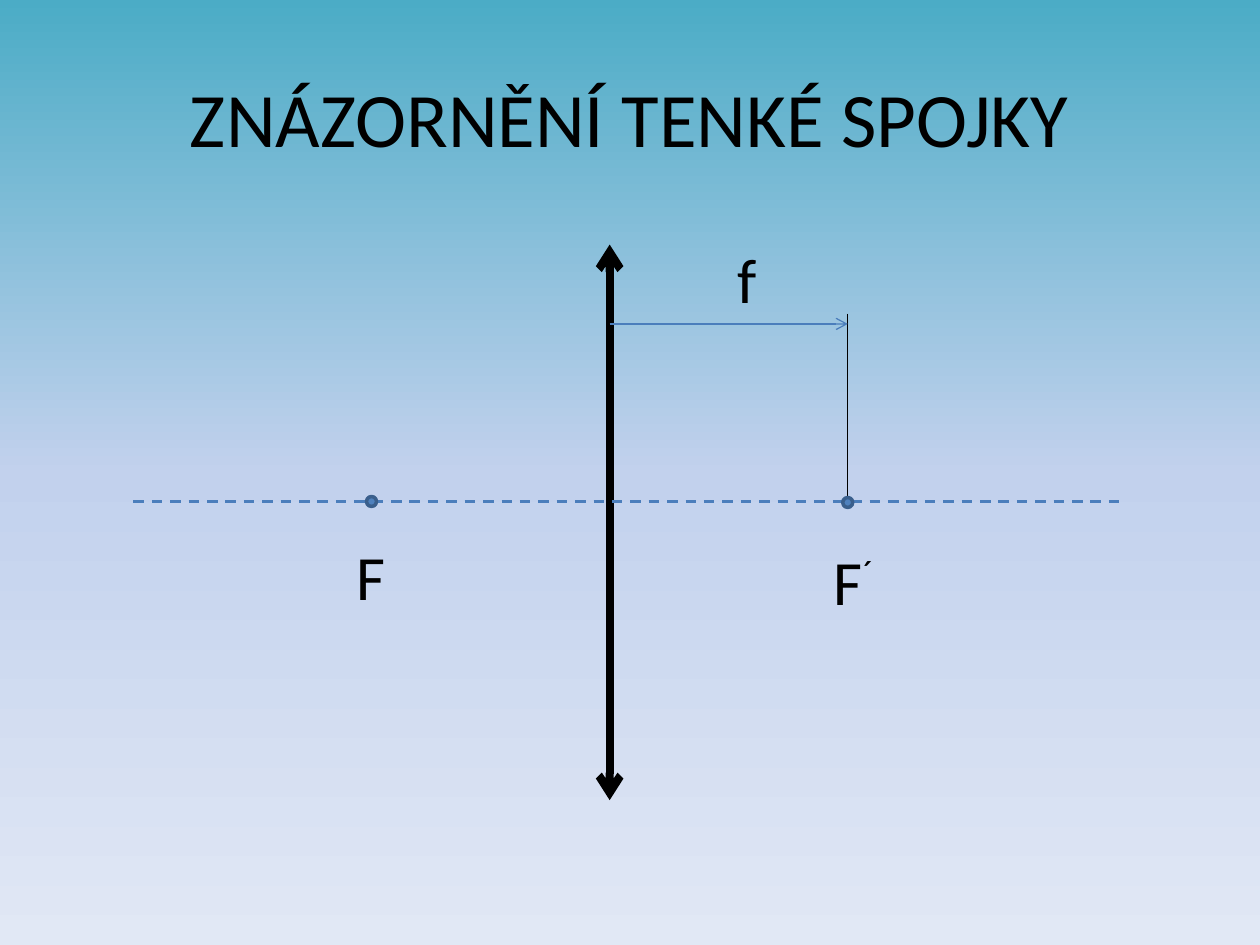
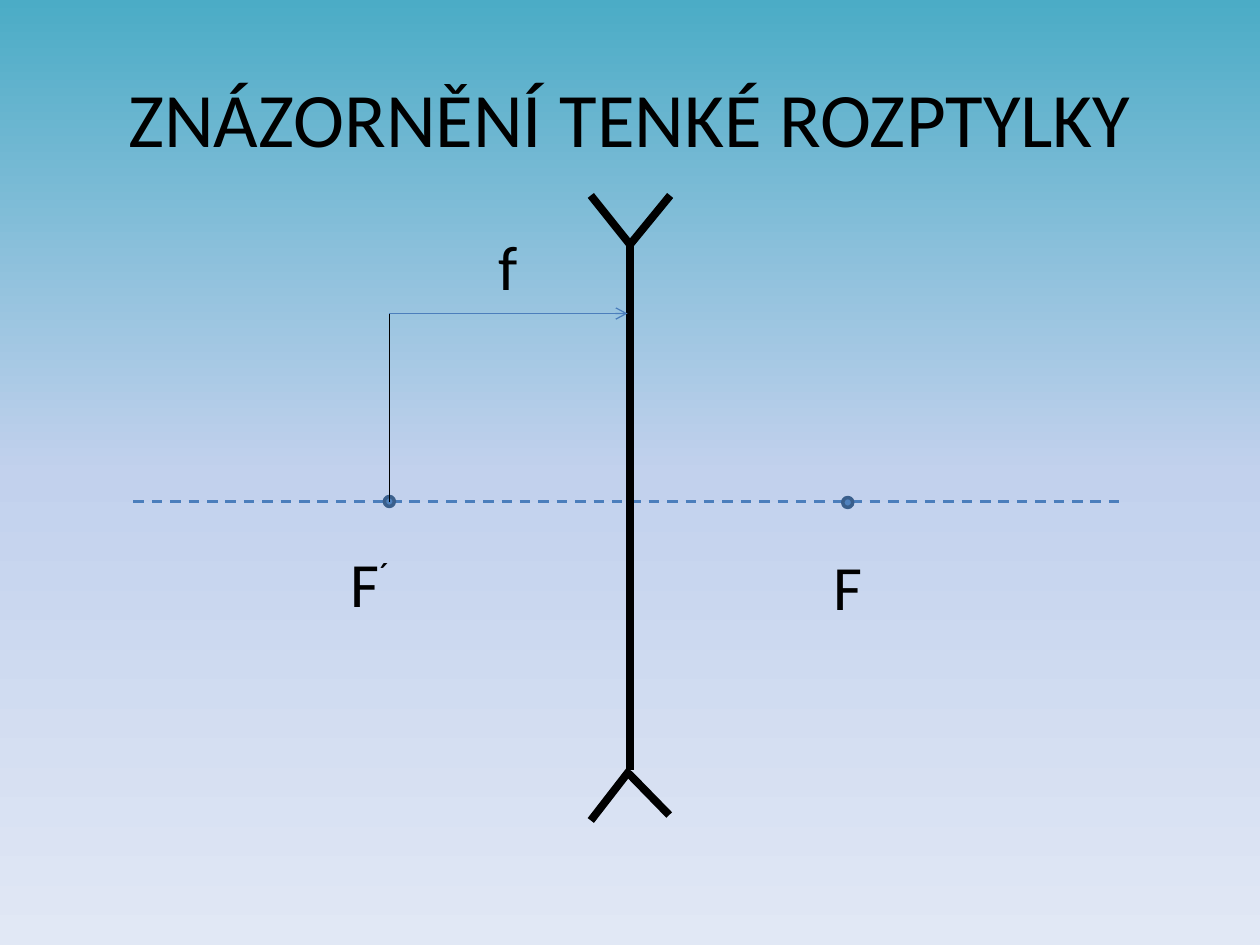
from lxml import etree
from pptx import Presentation
from pptx.dml.color import RGBColor
from pptx.enum.dml import MSO_LINE
from pptx.enum.shapes import MSO_CONNECTOR, MSO_SHAPE
from pptx.enum.text import MSO_ANCHOR, MSO_AUTO_SIZE, PP_ALIGN
from pptx.oxml.ns import qn
from pptx.util import Cm, Pt

STRAIGHT = MSO_CONNECTOR.STRAIGHT
DASH = MSO_LINE.DASH
OVAL = MSO_SHAPE.OVAL
MIDDLE = MSO_ANCHOR.MIDDLE
CENTER = PP_ALIGN.CENTER
FIT_SHAPE = MSO_AUTO_SIZE.SHAPE_TO_FIT_TEXT

FONT = "Calibri"
BLACK, BLUE, POINT_FILL, POINT_EDGE = "000000", "4B7EBC", "4F81BD", "3A5F8C"
SKY = [(0, "4BACC6"), (50, "C2D1ED"), (100, "E1E8F5")]
AXIS_Y = 10.11
LENS_WIDTH = 4.5


def color(value):
    """Turn a hex string into a colour."""
    return RGBColor.from_string(value)


class LensDeck:
    """Holds the deck, its style and the current page; lengths are in centimetres."""

    def __init__(self):
        self.deck = Presentation()
        self.deck.slide_width, self.deck.slide_height = Cm(25.4), Cm(19.05)
        self.page = None

    def start_page(self, title):
        """Add a page with the shared background and title."""
        self.page = self.deck.slides.add_slide(self.deck.slide_layouts[6])
        fill = self.page.background.fill
        fill.gradient()
        fill.gradient_angle = 270
        stops = next(self.page.element.iter(qn("a:gsLst")))
        for stop in list(stops):
            stops.remove(stop)
        for percent, value in SKY:
            stop = etree.SubElement(stops, qn("a:gs"), pos=str(percent * 1000))
            etree.SubElement(stop, qn("a:srgbClr"), val=value)
        frame = self.text_box(1.27, 0.76, 22.86, 3.18)
        frame.word_wrap = True
        frame.vertical_anchor = MIDDLE
        frame.paragraphs[0].alignment = CENTER
        self.span(frame.paragraphs[0], title, 44)

    def text_box(self, left, top, width, height):
        """Add an empty text box and return its frame."""
        box = self.page.shapes.add_textbox(Cm(left), Cm(top), Cm(width), Cm(height))
        return box.text_frame

    def span(self, para, text, size):
        """Add one styled run to a paragraph."""
        span = para.add_run()
        span.text = text
        span.font.name, span.font.size = FONT, Pt(size)
        span.font.color.rgb = color(BLACK)
        return span

    def label(self, left, top, width, letter, prime=False):
        """Add a letter, with a raised prime if asked."""
        frame = self.text_box(left, top, width, 1.8)
        frame.word_wrap = False
        frame.auto_size = FIT_SHAPE
        para = frame.paragraphs[0]
        self.span(para, letter, 36)
        if prime:
            mark = self.span(para, "´", 36)
            mark.font._element.set("baseline", "30000")

    def line(self, start, end, value=BLACK, width=0.75, dash=None, arrow=False):
        """Draw a straight line, with an arrowhead at its end if asked."""
        points = [Cm(length) for length in (*start, *end)]
        link = self.page.shapes.add_connector(STRAIGHT, *points)
        link.line.color.rgb = color(value)
        link.line.width = Pt(width)
        if dash:
            link.line.dash_style = dash
        if arrow:
            outline = link.line._get_or_add_ln()
            etree.SubElement(outline, qn("a:tailEnd"), type="arrow")
        etree.SubElement(link._element.spPr, qn("a:effectLst"))

    def lens_line(self, start, end, arrow=False):
        """Draw one thick stroke of the lens symbol."""
        self.line(start, end, width=LENS_WIDTH, arrow=arrow)

    def axis(self):
        """Draw the dashed optical axis."""
        self.line((2.69, AXIS_Y), (22.71, AXIS_Y), BLUE, 1.5, DASH)

    def focal_length(self, focus_x, y, start_x, end_x):
        """Draw the guide up from a focus and the focal length arrow."""
        self.line((focus_x, 6.32), (focus_x, AXIS_Y))
        self.line((start_x, y), (end_x, y), BLUE, arrow=True)

    def focus(self, x, y=AXIS_Y, size=0.2):
        """Draw a focal point centred on the given place."""
        dot = self.page.shapes.add_shape(
            OVAL, Cm(x - size / 2), Cm(y - size / 2), Cm(size), Cm(size))
        dot.shadow.inherit = False
        dot.fill.solid()
        dot.fill.fore_color.rgb = color(POINT_FILL)
        dot.line.color.rgb = color(POINT_EDGE)
        dot.line.width = Pt(2)


def converging_lens(show):
    """Build the page about the thin converging lens."""
    lens_x, left_focus, right_focus = 12.29, 7.49, 17.09
    show.start_page("ZNÁZORNĚNÍ TENKÉ SPOJKY")
    show.lens_line((lens_x, 5.33), (lens_x, 16.13), arrow=True)
    show.lens_line((lens_x, 15.32), (lens_x, 4.93), arrow=True)
    show.axis()
    show.focal_length(right_focus, 6.53, lens_x, right_focus)
    show.focus(left_focus)
    show.focus(right_focus, 10.13)
    show.label(6.93, 10.72, 1.09, "F")
    show.label(16.56, 10.82, 1.35, "F", prime=True)
    show.label(14.61, 4.72, 0.91, "f")


def diverging_lens(show):
    """Build the page about the thin diverging lens."""
    lens_x, left_focus, right_focus = 12.7, 7.85, 17.09
    top, bottom = (lens_x, 4.93), (lens_x, 15.52)
    show.start_page("ZNÁZORNĚNÍ TENKÉ ROZPTYLKY")
    show.axis()
    show.lens_line(top, bottom)
    show.lens_line(top, (13.51, 3.94))
    show.lens_line((11.91, 16.54), bottom)
    show.lens_line((11.91, 3.94), top)
    show.lens_line((lens_x, 15.62), (13.49, 16.43))
    show.focus(right_focus, 10.13)
    show.focus(left_focus)
    show.label(6.81, 10.85, 1.35, "F", prime=True)
    show.label(16.56, 10.92, 1.09, "F")
    show.focal_length(left_focus, 6.32, left_focus, 12.65)
    show.label(9.8, 4.47, 0.91, "f")


def main():
    """Build both pages and save the deck."""
    show = LensDeck()
    converging_lens(show)
    diverging_lens(show)
    show.deck.save("out.pptx")


if __name__ == "__main__":
    main()
